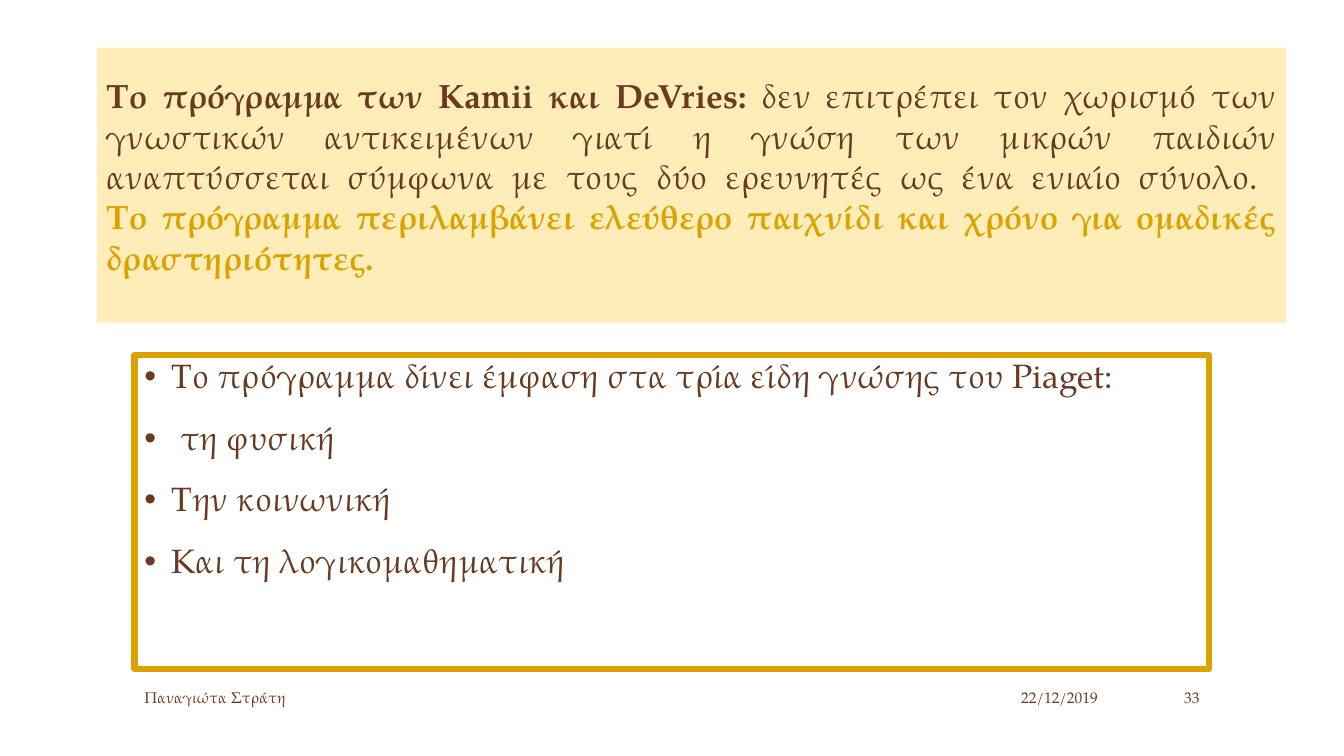
from dataclasses import dataclass

from lxml import etree
from pptx import Presentation
from pptx.dml.color import RGBColor
from pptx.enum.text import MSO_ANCHOR, MSO_AUTO_SIZE, PP_ALIGN
from pptx.oxml.ns import qn
from pptx.util import Cm, Pt

TOP, MIDDLE, BOTTOM = MSO_ANCHOR.TOP, MSO_ANCHOR.MIDDLE, MSO_ANCHOR.BOTTOM
LEFT, RIGHT, JUSTIFY = PP_ALIGN.LEFT, PP_ALIGN.RIGHT, PP_ALIGN.JUSTIFY
NO_FIT = MSO_AUTO_SIZE.NONE
TITLE_ONLY = 5


@dataclass(frozen=True)
class Theme:
    font: str = "TeX Gyre Pagella"
    brown: str = "6A3A20"
    gold: str = "DCA300"
    cream: str = "FFEDB9"
    white: str = "FFFFFF"
    text_size: float = 24
    footer_size: float = 11
    border: float = 4.5


THEME = Theme()


@dataclass(frozen=True)
class Run:
    text: str
    size: float = THEME.text_size
    color: str = THEME.brown
    bold: bool = False


@dataclass(frozen=True)
class Box:
    left: float
    top: float
    width: float
    height: float
    anchor: MSO_ANCHOR = MIDDLE
    bottom_inset: float = 0.13


@dataclass(frozen=True)
class Footer:
    text: str
    left: float
    width: float
    align: PP_ALIGN


TITLE_BOX = Box(2.44, 1.2, 29.97, 6.93, BOTTOM, 1.15)
TITLE_LINES = [
    [
        Run("Το πρόγραμμα των Kamii και DeVries: ", bold=True),
        Run("δεν επιτρέπει τον χωρισμό των γνωστικών αντικειμένων γιατί η γνώση "
            "των μικρών παιδιών αναπτύσσεται σύμφωνα με τους δύο ερευνητές ως "
            "ένα ενιαίο σύνολο. "),
    ],
    [
        Run("Το πρόγραμμα περιλαμβάνει ελεύθερο παιχνίδι και χρόνο για ομαδικές "
            "δραστηριότητες.", color=THEME.gold, bold=True),
    ],
]
BODY_BOX = Box(3.39, 8.94, 27.08, 7.92, TOP)
BODY_ITEMS = [
    "Το πρόγραμμα δίνει έμφαση στα τρία είδη γνώσης του Piaget:",
    " τη φυσική",
    "Την κοινωνική",
    "Και τη λογικομαθηματική",
]
FOOTER_TOP, FOOTER_HEIGHT = 17.15, 0.84
FOOTERS = [
    Footer("Παναγιώτα Στράτη", 3.39, 20.6, LEFT),
    Footer("22/12/2019", 24.54, 3.38, RIGHT),
    Footer("33", 28.5, 1.98, RIGHT),
]


def set_all(target, values: dict) -> None:
    for name, value in values.items():
        setattr(target, name, value)


def place(sp, box: Box):
    set_all(sp, {"left": Cm(box.left), "top": Cm(box.top),
                 "width": Cm(box.width), "height": Cm(box.height)})
    tf = sp.text_frame
    set_all(tf, {"word_wrap": True, "auto_size": NO_FIT,
                 "vertical_anchor": box.anchor,
                 "margin_left": Cm(0.25), "margin_right": Cm(0.25),
                 "margin_top": Cm(0.13), "margin_bottom": Cm(box.bottom_inset)})
    return tf


def paint(sp, color: str) -> None:
    sp.fill.solid()
    sp.fill.fore_color.rgb = RGBColor.from_string(color)


def add_run(p, run: Run) -> None:
    r = p.add_run()
    r.text = run.text
    set_all(r.font, {"name": THEME.font, "size": Pt(run.size), "bold": run.bold})
    r.font.color.rgb = RGBColor.from_string(run.color)


def add_bullet(p) -> None:
    pPr = p._p.get_or_add_pPr()
    pPr.set("marL", str(Cm(0.69)))
    pPr.set("indent", str(-Cm(0.69)))
    color = etree.SubElement(pPr, qn("a:buClr"))
    etree.SubElement(color, qn("a:srgbClr"), val=THEME.brown)
    etree.SubElement(pPr, qn("a:buFont"), typeface="Arial")
    etree.SubElement(pPr, qn("a:buChar"), char="•")


def add_title(s) -> None:
    sp = s.shapes.title
    tf = place(sp, TITLE_BOX)
    paint(sp, THEME.cream)
    p = tf.paragraphs[0]
    p.alignment = JUSTIFY
    for i, line in enumerate(TITLE_LINES):
        if i:
            p.add_line_break()
        for run in line:
            add_run(p, run)


def add_body(s) -> None:
    sp = s.shapes.add_textbox(0, 0, 0, 0)
    tf = place(sp, BODY_BOX)
    paint(sp, THEME.white)
    sp.line.color.rgb = RGBColor.from_string(THEME.gold)
    sp.line.width = Pt(THEME.border)
    for i, text in enumerate(BODY_ITEMS):
        p = tf.add_paragraph() if i else tf.paragraphs[0]
        add_bullet(p)
        set_all(p, {"line_spacing": 0.9, "space_before": Pt(18 if i else 0)})
        add_run(p, Run(text))


def add_footer(s, footer: Footer) -> None:
    sp = s.shapes.add_textbox(0, 0, 0, 0)
    tf = place(sp, Box(footer.left, FOOTER_TOP, footer.width, FOOTER_HEIGHT))
    p = tf.paragraphs[0]
    p.alignment = footer.align
    add_run(p, Run(footer.text, THEME.footer_size))


def main() -> None:
    prs = Presentation()
    set_all(prs, {"slide_width": Cm(33.87), "slide_height": Cm(19.05)})
    s = prs.slides.add_slide(prs.slide_layouts[TITLE_ONLY])
    add_title(s)
    add_body(s)
    for footer in FOOTERS:
        add_footer(s, footer)
    prs.save("out.pptx")


if __name__ == "__main__":
    main()
